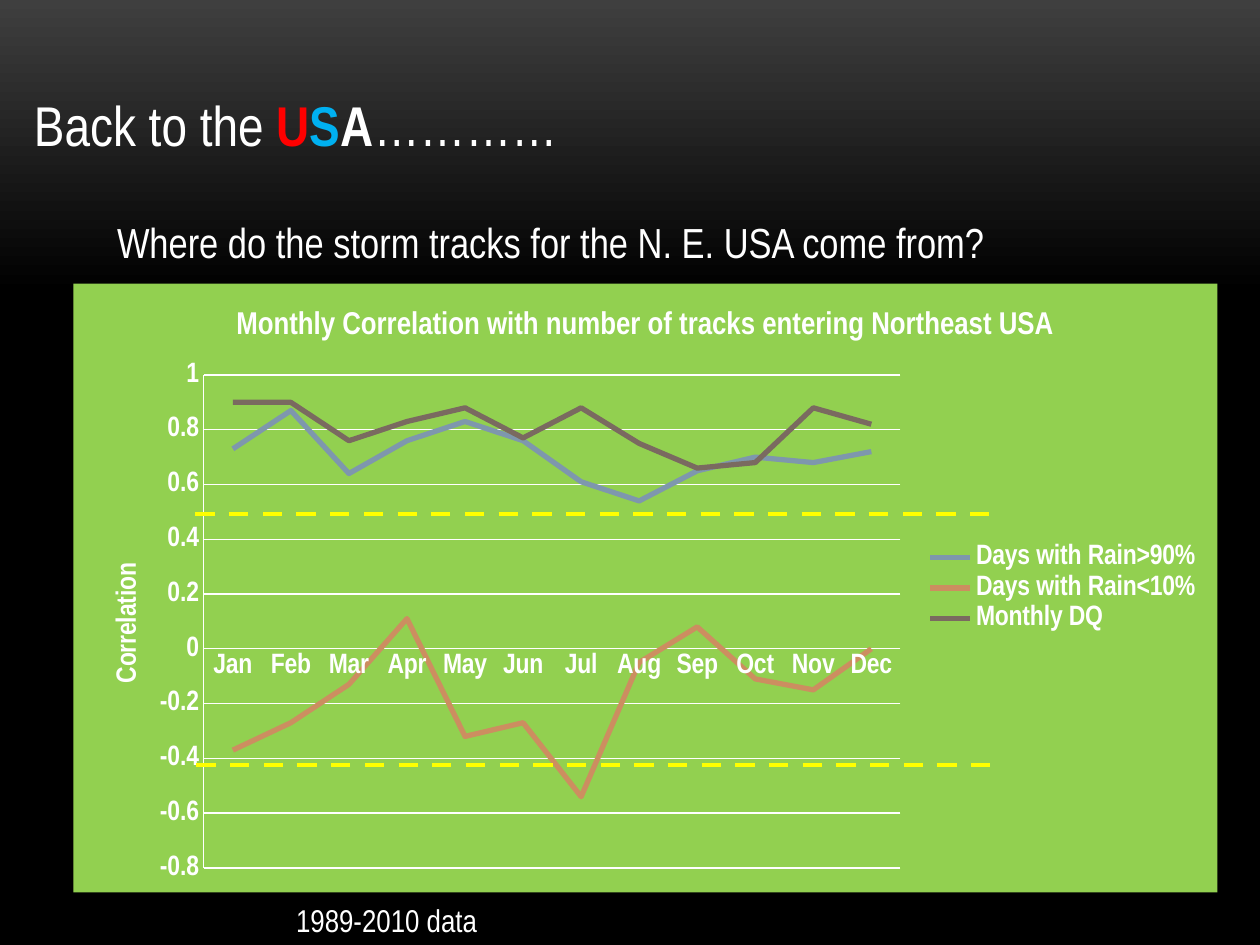
import copy
from dataclasses import dataclass

import lxml.etree
import pptx
import pptx.chart.data
import pptx.dml.color
import pptx.enum.chart
import pptx.enum.dml
import pptx.enum.shapes
import pptx.enum.text
import pptx.oxml
import pptx.oxml.ns
import pptx.util

FONT = "Arial Narrow"
COLORS = {
    "white": "FFFFFF", "black": "000000", "charcoal": "3F3F3F",
    "red": "FF0000", "blue": "00B0F0", "yellow": "FFFF00", "green": "92D050",
    "rainy": "7E97AD", "dry": "CC8E60", "quality": "7A6A60",
}


@dataclass
class Box:
    left: float
    top: float
    width: float
    height: float

    def lengths(self) -> list[int]:
        return [pptx.util.Cm(v) for v in (self.left, self.top, self.width, self.height)]


@dataclass
class Series:
    name: str
    color: str
    values: list[float]


MONTHS = "Jan Feb Mar Apr May Jun Jul Aug Sep Oct Nov Dec".split()
SERIES = [
    Series("Days with Rain>90%", "rainy",
           [0.73, 0.87, 0.64, 0.76, 0.83, 0.76, 0.61, 0.54, 0.65, 0.7, 0.68, 0.72]),
    Series("Days with Rain<10%", "dry",
           [-0.37, -0.27, -0.13, 0.11, -0.32, -0.27, -0.54, -0.05, 0.08, -0.11, -0.15, 0]),
    Series("Monthly DQ", "quality",
           [0.9, 0.9, 0.76, 0.83, 0.88, 0.77, 0.88, 0.75, 0.66, 0.68, 0.88, 0.82]),
]
THRESHOLDS = [(3.94, 10.36), (3.96, 15.42)]
THRESHOLD_LENGTH = 16.08


def rgb(name: str) -> pptx.dml.color.RGBColor:
    return pptx.dml.color.RGBColor.from_string(COLORS[name])


def format_font(font, size: float, color: str = "white", bold: bool = False) -> None:
    font.name = FONT
    font.size = pptx.util.Pt(size)
    font.bold = bold
    font.color.rgb = rgb(color)


def add_text(paragraph, text: str, *, size: float, color: str = "white", bold: bool = False) -> None:
    run = paragraph.add_run()
    run.text = text
    format_font(run.font, size, color, bold)


def prepare_frame(shape):
    frame = shape.text_frame
    frame.word_wrap = True
    frame.auto_size = pptx.enum.text.MSO_AUTO_SIZE.SHAPE_TO_FIT_TEXT
    frame.vertical_anchor = pptx.enum.text.MSO_ANCHOR.TOP
    paragraph = frame.paragraphs[0]
    paragraph.alignment = pptx.enum.text.PP_ALIGN.LEFT
    return paragraph


def set_background(slide) -> None:
    fill = slide.background.fill
    fill.gradient()
    fill.gradient_angle = 270
    for stop, position, color in zip(fill.gradient_stops, (0, 0.31), ("charcoal", "black")):
        stop.position = position
        stop.color.rgb = rgb(color)
    stops = slide.element.xpath(".//p:bg//a:gsLst")[0]
    last_stop = copy.deepcopy(stops[-1])
    last_stop.set("pos", "100000")
    stops.append(last_stop)


def set_layout(element, index: int, inner: bool = False, **fractions: float) -> None:
    for old_layout in element.xpath("./c:layout"):
        element.remove(old_layout)
    settings = {"layoutTarget": "inner"} if inner else {}
    settings |= {f"{axis}Mode": "edge" for axis in "xy"}
    settings |= fractions
    layout = pptx.oxml.parse_xml(f"<c:layout {pptx.oxml.ns.nsdecls('c')}/>")
    manual = lxml.etree.SubElement(layout, pptx.oxml.ns.qn("c:manualLayout"))
    for tag, value in settings.items():
        lxml.etree.SubElement(manual, pptx.oxml.ns.qn(f"c:{tag}")).set("val", str(value))
    element.insert(index, layout)


def format_axis(axis) -> None:
    axis.major_tick_mark = pptx.enum.chart.XL_TICK_MARK.NONE
    axis.minor_tick_mark = pptx.enum.chart.XL_TICK_MARK.NONE
    axis.format.line.color.rgb = rgb("white")
    axis.format.line.width = pptx.util.Pt(0.75)
    format_font(axis.tick_labels.font, 16, bold=True)


def add_correlation_chart(slide, box: Box) -> None:
    data = pptx.chart.data.CategoryChartData()
    data.categories = MONTHS
    for series in SERIES:
        data.add_series(series.name, series.values)
    chart = slide.shapes.add_chart(
        pptx.enum.chart.XL_CHART_TYPE.LINE, *box.lengths(), data).chart
    format_font(chart.font, 10)
    chart_space = chart.element
    chart_space.xpath("./c:txPr")[0].addprevious(pptx.oxml.parse_xml(
        f"<c:spPr {pptx.oxml.ns.nsdecls('c', 'a')}><a:solidFill>"
        f"<a:srgbClr val=\"{COLORS['green']}\"/></a:solidFill>"
        "<a:ln><a:noFill/></a:ln></c:spPr>"))

    chart.has_title = True
    add_text(chart.chart_title.text_frame.paragraphs[0],
             "Monthly Correlation with number of tracks entering Northeast USA",
             size=18, bold=True)

    format_axis(chart.category_axis)
    value_axis = chart.value_axis
    format_axis(value_axis)
    value_axis.minimum_scale, value_axis.maximum_scale = -0.8, 1
    value_axis.major_unit = 0.2
    value_axis.tick_labels.number_format = "General"
    value_axis.tick_labels.number_format_is_linked = False
    value_axis.has_major_gridlines = True
    value_axis.major_gridlines.format.line.color.rgb = rgb("white")
    value_axis.major_gridlines.format.line.width = pptx.util.Pt(0.75)
    add_text(value_axis.axis_title.text_frame.paragraphs[0], "Correlation", size=16, bold=True)
    axis_title = chart_space.xpath(".//c:valAx/c:title")[0]
    body = axis_title.xpath(".//a:bodyPr")[0]
    body.set("rot", "-5400000")
    body.set("vert", "horz")
    set_layout(axis_title, 1, x=0.03, y=0.45)

    chart.has_legend = True
    chart.legend.position = pptx.enum.chart.XL_LEGEND_POSITION.RIGHT
    chart.legend.include_in_layout = False
    format_font(chart.legend.font, 16, bold=True)
    set_layout(chart_space.xpath(".//c:legend")[0], 1, x=0.74, y=0.42, w=0.25, h=0.16)
    set_layout(chart_space.xpath(".//c:plotArea")[0], 0, inner=True,
               x=0.114, y=0.15, w=0.609, h=0.81)

    chart.plots[0].vary_by_categories = False
    for line, series in zip(chart.plots[0].series, SERIES):
        line.smooth = False
        line.marker.style = pptx.enum.chart.XL_MARKER_STYLE.NONE
        line.format.line.color.rgb = rgb(series.color)
        line.format.line.width = pptx.util.Pt(3)


def add_threshold(slide, left: float, top: float) -> None:
    start, end, height = (pptx.util.Cm(v) for v in (left, left + THRESHOLD_LENGTH, top))
    connector = slide.shapes.add_connector(
        pptx.enum.shapes.MSO_CONNECTOR.STRAIGHT, start, height, end, height)
    connector.line.color.rgb = rgb("yellow")
    connector.line.width = pptx.util.Pt(2.75)
    connector.line.dash_style = pptx.enum.dml.MSO_LINE.DASH
    properties = connector.element.xpath("./p:spPr")[0]
    lxml.etree.SubElement(properties, pptx.oxml.ns.qn("a:effectLst"))


def main() -> None:
    presentation = pptx.Presentation()
    presentation.slide_width = pptx.util.Cm(25.4)
    presentation.slide_height = pptx.util.Cm(19.05)
    slide = presentation.slides.add_slide(presentation.slide_layouts.get_by_name("Title Only"))
    set_background(slide)

    title = slide.shapes.title
    title.left, title.top, title.width, title.height = Box(0.43, 1.7, 13.77, 1.63).lengths()
    paragraph = prepare_frame(title)
    for text, color, bold in [("Back to the ", "white", False), ("U", "red", True),
                              ("S", "blue", True), ("A", "white", True),
                              ("…………", "white", False)]:
        add_text(paragraph, text, size=32, color=color, bold=bold)

    question = slide.shapes.add_textbox(*Box(2.11, 4.24, 19.05, 1.27).lengths())
    add_text(prepare_frame(question),
             "Where do the storm tracks for the N. E. USA come from?", size=24)
    add_correlation_chart(slide, Box(1.48, 5.72, 23.06, 12.27))
    for left, top in THRESHOLDS:
        add_threshold(slide, left, top)
    period = slide.shapes.add_textbox(*Box(5.72, 18.03, 9.53, 1.02).lengths())
    add_text(prepare_frame(period), "1989-2010 data", size=18)

    presentation.save("out.pptx")


if __name__ == "__main__":
    main()
